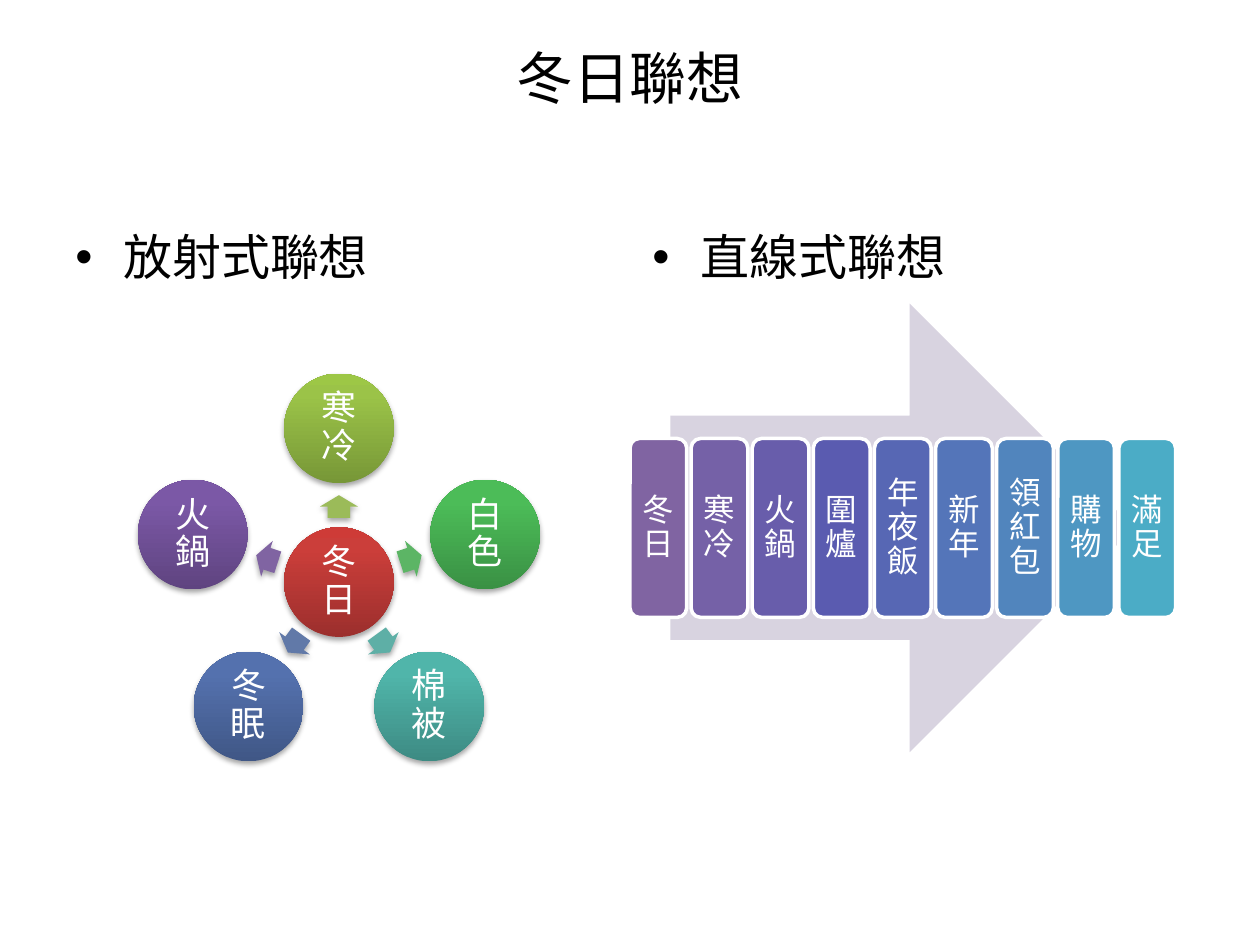
from copy import deepcopy
from dataclasses import dataclass
from math import cos, radians, sin

from lxml.etree import SubElement
from pptx import Presentation
from pptx.dml.color import RGBColor
from pptx.enum.shapes import MSO_SHAPE
from pptx.enum.text import MSO_ANCHOR, PP_ALIGN
from pptx.oxml.ns import qn
from pptx.shapes.autoshape import Shape
from pptx.shapes.shapetree import GroupShapes
from pptx.util import Inches, Pt


@dataclass(frozen=True)
class Theme:
    font: str = "Calibri"
    ink: str = "000000"
    light: str = "FFFFFF"
    band: str = "D8D3E0"
    title_size: float = 32.4
    body_size: float = 28
    circle_size: float = 20
    step_size: float = 18


@dataclass(frozen=True)
class Idea:
    text: str
    gradient: tuple[str, str, str]  # bottom, upper and top colours
    angle: float = 0                # clockwise from the right
    arrow_color: str = ""


@dataclass(frozen=True)
class Step:
    text: str
    color: str


THEME = Theme()

# Radial association
HUB = Idea("冬日", ("9C2F2D", "CB3E3A", "CE3B37"))
IDEAS = [
    Idea("寒冷", ("779737", "9BC348", "9DC746"), 270, "9BBB59"),
    Idea("白色", ("3A9144", "4CBC58", "4ABF57"), 342, "5CB565"),
    Idea("棉被", ("3D8B83", "50B5AA", "4EB8AC"), 54, "5EAFA6"),
    Idea("冬眠", ("405786", "5471AE", "5271B0"), 126, "6179A8"),
    Idea("火鍋", ("5F4480", "7B58A6", "7C57A8"), 198, "8064A2"),
]
CENTER_X, CENTER_Y = 2.69, 4.62
IDEA_RADIUS, ARROW_RADIUS = 1.22, 0.6
CIRCLE = 0.87
ARROW_LENGTH, ARROW_WIDTH = 0.18, 0.3

# Linear association
STEPS = [
    Step("冬日", "8064A2"), Step("寒冷", "7561A7"), Step("火鍋", "685DAB"),
    Step("圍爐", "5A5BB0"), Step("年夜飯", "5767B4"), Step("新年", "5475B9"),
    Step("領紅包", "5185BD"), Step("購物", "4E97C2"), Step("滿足", "4BACC6"),
]
STEP_LEFT, STEP_TOP, STEP_PITCH = 5, 3.48, 0.485
STEP_WIDTH, STEP_HEIGHT = 0.45, 1.42


def write_text(shape: Shape, text: str, *, size: float, color: str = THEME.light,
               align: PP_ALIGN = PP_ALIGN.CENTER,
               anchor: MSO_ANCHOR = MSO_ANCHOR.MIDDLE,
               inset: float | None = None, bottom_inset: float | None = None,
               line_spacing: float | None = None, bullet: str = "") -> None:
    frame = shape.text_frame
    frame.word_wrap = True
    frame.vertical_anchor = anchor
    if inset is not None:
        frame.margin_left = frame.margin_right = Inches(inset)
        frame.margin_top = frame.margin_bottom = Inches(inset)
    if bottom_inset is not None:
        frame.margin_bottom = Inches(bottom_inset)
    paragraph = frame.paragraphs[0]
    paragraph.alignment = align
    paragraph.line_spacing = line_spacing
    run = paragraph.add_run()
    run.text = text
    run.font.name = THEME.font
    run.font.size = Pt(size)
    run.font.color.rgb = RGBColor.from_string(color)
    if bullet:
        properties = paragraph._p.get_or_add_pPr()
        properties.set("marL", str(Inches(0.38)))
        properties.set("indent", str(Inches(-0.38)))
        SubElement(properties, qn("a:buFont"), typeface="Arial")
        SubElement(properties, qn("a:buChar"), char=bullet)


def add_plain_shape(shapes: GroupShapes, kind: MSO_SHAPE, left: float, top: float,
                    width: float, height: float, color: str = "") -> Shape:
    shape = shapes.add_shape(kind, Inches(left), Inches(top), Inches(width), Inches(height))
    shape.shadow.inherit = False
    shape.line.fill.background()
    if color:
        shape.fill.solid()
        shape.fill.fore_color.rgb = RGBColor.from_string(color)
    return shape


def add_soft_shadow(shape: Shape) -> None:
    effects = shape._element.spPr.find(qn("a:effectLst"))
    shadow = SubElement(effects, qn("a:outerShdw"), blurRad=str(Pt(3.1)),
                        dist=str(Pt(1.8)), dir="5400000", rotWithShape="0")
    color = SubElement(shadow, qn("a:srgbClr"), val="000000")
    SubElement(color, qn("a:alpha"), val="35000")


def fill_gradient(shape: Shape, colors: tuple[str, str, str]) -> None:
    shape.fill.gradient()
    shape.fill.gradient_angle = 90
    stop_list = shape._element.spPr.find(".//" + qn("a:gsLst"))
    stop_list.append(deepcopy(stop_list[-1]))
    for stop, color, position in zip(shape.fill.gradient_stops, colors, (0, 0.8, 1)):
        stop.color.rgb = RGBColor.from_string(color)
        stop.position = position


def around_center(angle: float, radius: float) -> tuple[float, float]:
    return (CENTER_X + radius * cos(radians(angle)),
            CENTER_Y + radius * sin(radians(angle)))


def add_circle(shapes: GroupShapes, idea: Idea, radius: float) -> None:
    x, y = around_center(idea.angle, radius)
    circle = add_plain_shape(shapes, MSO_SHAPE.OVAL, x - CIRCLE / 2, y - CIRCLE / 2,
                             CIRCLE, CIRCLE)
    fill_gradient(circle, idea.gradient)
    add_soft_shadow(circle)
    write_text(circle, idea.text, size=THEME.circle_size, inset=0.03, line_spacing=0.9)


def add_spoke(shapes: GroupShapes, idea: Idea) -> None:
    x, y = around_center(idea.angle, ARROW_RADIUS)
    arrow = add_plain_shape(shapes, MSO_SHAPE.RIGHT_ARROW, x - ARROW_LENGTH / 2,
                            y - ARROW_WIDTH / 2, ARROW_LENGTH, ARROW_WIDTH, idea.arrow_color)
    arrow.adjustments[0] = 0.6
    arrow.rotation = idea.angle
    add_soft_shadow(arrow)


def add_step(shapes: GroupShapes, step: Step, index: int) -> None:
    box = add_plain_shape(shapes, MSO_SHAPE.ROUNDED_RECTANGLE, STEP_LEFT + index * STEP_PITCH,
                          STEP_TOP, STEP_WIDTH, STEP_HEIGHT, step.color)
    box.line.color.rgb = RGBColor.from_string(THEME.light)
    box.line.width = Pt(2)
    write_text(box, step.text, size=THEME.step_size, inset=0.07, line_spacing=0.9)


def main() -> None:
    presentation = Presentation()
    presentation.slide_width, presentation.slide_height = Inches(10), Inches(7.5)
    slide = presentation.slides.add_slide(presentation.slide_layouts[6])

    # Title, set in the upper half of its box
    title = slide.shapes.add_textbox(Inches(0.5), Inches(0.3), Inches(9), Inches(1.25))
    write_text(title, "冬日聯想", size=THEME.title_size, color=THEME.ink, bottom_inset=0.68)

    # Column headings
    for left, heading in ((0.5, "放射式聯想"), (5.08, "直線式聯想")):
        column = slide.shapes.add_textbox(Inches(left), Inches(1.75), Inches(4.42), Inches(4.95))
        write_text(column, heading, size=THEME.body_size, color=THEME.ink,
                   align=PP_ALIGN.LEFT, anchor=MSO_ANCHOR.TOP, bullet="•")

    # Hub with ideas around it
    radial = slide.shapes.add_group_shape().shapes
    add_circle(radial, HUB, 0)
    for idea in IDEAS:
        add_spoke(radial, idea)
        add_circle(radial, idea, IDEA_RADIUS)

    # Chain of steps on a wide arrow
    linear = slide.shapes.add_group_shape().shapes
    add_plain_shape(linear, MSO_SHAPE.RIGHT_ARROW, 5.32, 2.41, 3.68, 3.56, THEME.band)
    for index, step in enumerate(STEPS):
        add_step(linear, step, index)

    presentation.save("out.pptx")


if __name__ == "__main__":
    main()
